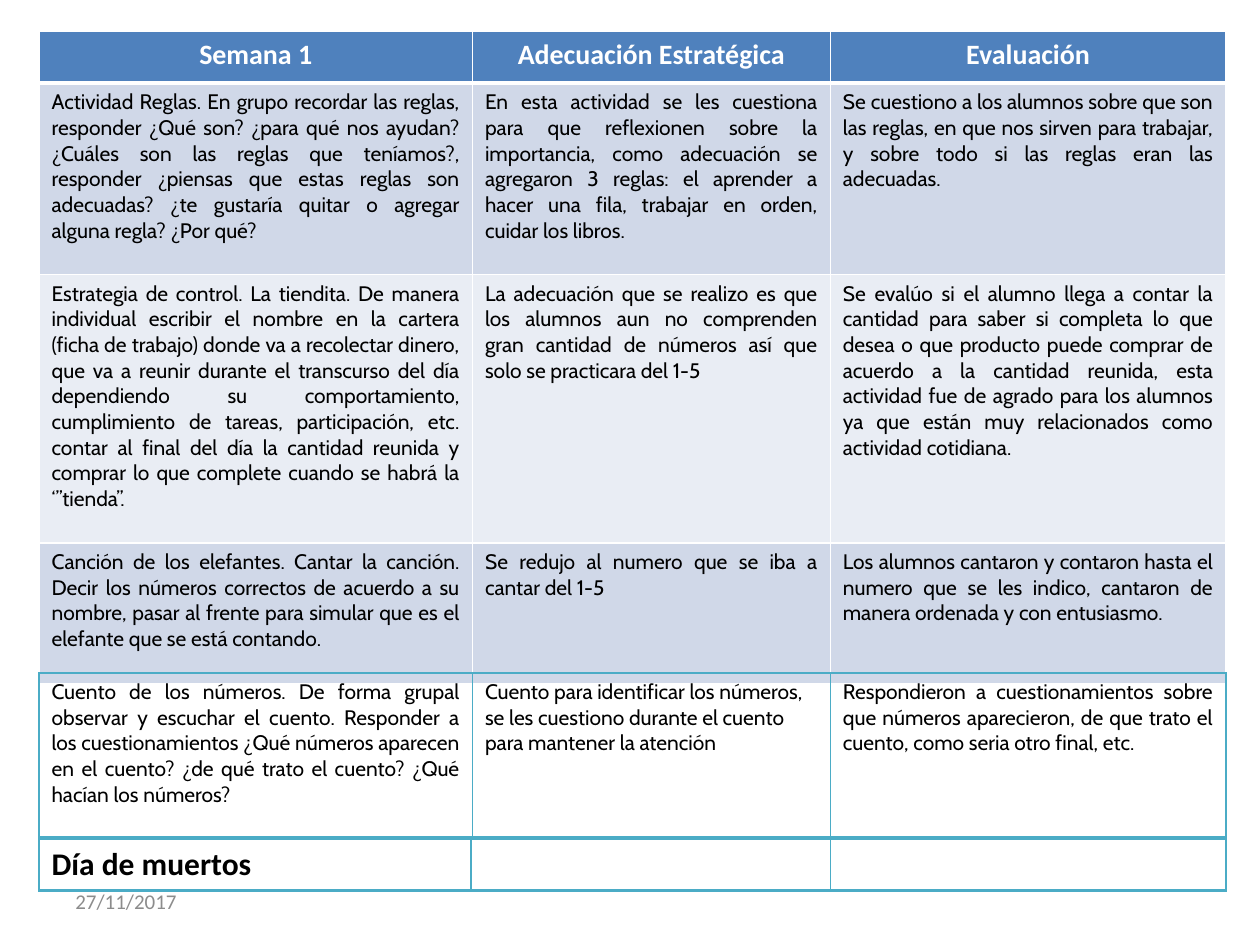
"""Build the weekly activity plan slide with its three stacked tables."""
from dataclasses import dataclass
from typing import Optional

from lxml import etree
from pptx import Presentation
from pptx.dml.color import RGBColor
from pptx.enum.text import MSO_ANCHOR, PP_ALIGN
from pptx.oxml.ns import qn
from pptx.util import Inches, Pt

LEFT, CENTER, JUSTIFY = PP_ALIGN.LEFT, PP_ALIGN.CENTER, PP_ALIGN.JUSTIFY
MIDDLE = MSO_ANCHOR.MIDDLE

WHITE = RGBColor(0xFF, 0xFF, 0xFF)
BLACK = RGBColor(0x00, 0x00, 0x00)
GRAY = RGBColor(0x8C, 0x8C, 0x8C)
BLUE = RGBColor(0x4F, 0x81, 0xBD)
BAND_DARK = RGBColor(0xD0, 0xD8, 0xE8)
BAND_LIGHT = RGBColor(0xE9, 0xED, 0xF4)
TEAL = RGBColor(0x4B, 0xAC, 0xC6)

SLIDE_WIDTH, SLIDE_HEIGHT = Inches(10), Inches(7.5)
COLUMN, ROW = SLIDE_WIDTH / 100, SLIDE_HEIGHT / 75
TABLE_LEFT = 3.1


@dataclass(frozen=True)
class CellText:
    """Wording of one cell and its format."""
    text: str
    align: PP_ALIGN = JUSTIFY
    size: int = 12
    font: str = "Cabin"
    color: RGBColor = BLACK
    bold: bool = False


@dataclass(frozen=True)
class PlanRow:
    """One table row: height in grid rows, cells, fill and bottom line."""
    height: float
    cells: tuple[CellText, ...]
    fill: Optional[RGBColor] = None
    bottom: float = 2


@dataclass(frozen=True)
class PlanTable:
    """One table: top in grid rows, column widths in grid columns."""
    top: float
    rows: tuple[PlanRow, ...]
    border: RGBColor = TEAL
    widths: tuple[float, ...] = (34.4, 28.4, 31.4)


def heading(text: str) -> CellText:
    """Describe a column heading."""
    return CellText(text, CENTER, 16, "Calibri", WHITE, True)


ACTIVITIES = PlanTable(2.5, (
    PlanRow(4.1, (
        heading("Semana 1"),
        heading("Adecuación Estratégica"),
        heading("Evaluación"),
    ), BLUE, 3),
    PlanRow(15.2, (
        CellText("Actividad Reglas. En grupo recordar las reglas, responder ¿Qué son? "
                 "¿para qué nos ayudan? ¿Cuáles son las reglas que teníamos?, responder "
                 "¿piensas que estas reglas son adecuadas? ¿te gustaría quitar o agregar "
                 "alguna regla? ¿Por qué?"),
        CellText("En esta actividad se les cuestiona para que reflexionen sobre la "
                 "importancia, como adecuación se agregaron 3 reglas: el aprender a hacer "
                 "una fila, trabajar en orden, cuidar los libros."),
        CellText("Se cuestiono a los alumnos sobre que son las reglas, en que nos sirven "
                 "para trabajar, y sobre todo si las reglas eran las adecuadas."),
    ), BAND_DARK, 1),
    PlanRow(21.3, (
        CellText("Estrategia de control. La tiendita. De manera individual escribir el "
                 "nombre en la cartera (ficha de trabajo) donde va a recolectar dinero, que "
                 "va a reunir durante el transcurso del día dependiendo su comportamiento, "
                 "cumplimiento de tareas, participación, etc. contar al final del día la "
                 "cantidad reunida y comprar lo que complete cuando se habrá la "
                 "‘’’tienda’’."),
        CellText("La adecuación que se realizo es que los alumnos aun no comprenden gran "
                 "cantidad de números así que solo se practicara del 1-5"),
        CellText("Se evalúo si el alumno llega a contar la cantidad para saber si completa "
                 "lo que desea o que producto puede comprar de acuerdo a la cantidad "
                 "reunida, esta actividad fue de agrado para los alumnos ya que están muy "
                 "relacionados como actividad cotidiana."),
    ), BAND_LIGHT, 1),
    PlanRow(11.2, (
        CellText("Canción de los elefantes. Cantar la canción. Decir los números correctos "
                 "de acuerdo a su nombre, pasar al frente para simular que es el elefante "
                 "que se está contando."),
        CellText("Se redujo al numero que se iba a cantar del 1-5"),
        CellText("Los alumnos cantaron y contaron hasta el numero que se les indico, "
                 "cantaron de manera ordenada y con entusiasmo."),
    ), BAND_DARK, 1),
), WHITE)

STORY = PlanTable(53.4, (
    PlanRow(13.1, (
        CellText("Cuento de los números. De forma grupal observar y escuchar el cuento. "
                 "Responder a los cuestionamientos ¿Qué números aparecen en el cuento? ¿de "
                 "qué trato el cuento? ¿Qué hacían los números?"),
        CellText("Cuento para identificar los números, se les cuestiono durante el cuento "
                 "para mantener la atención", LEFT),
        CellText("Respondieron a cuestionamientos sobre que números aparecieron, de que "
                 "trato el cuento, como seria otro final, etc."),
    )),
))

HOLIDAY = PlanTable(66.6, (
    PlanRow(4.1, (CellText("Día de muertos", LEFT, 18, "Calibri", BLACK, True),)),
), widths=(34.3, 28.5, 31.4))


def across(columns: float) -> int:
    """Turn grid columns into a length."""
    return round(columns * COLUMN)


def down(rows: float) -> int:
    """Turn grid rows into a length."""
    return round(rows * ROW)


def write(frame, text: str, *, align=LEFT, size=12, font="Calibri",
          color=BLACK, bold=False) -> None:
    """Fill a text frame with one formatted paragraph."""
    paragraph = frame.paragraphs[0]
    paragraph.alignment = align
    run = paragraph.add_run()
    run.text = text
    run.font.size, run.font.name, run.font.bold = Pt(size), font, bold
    run.font.color.rgb = color


def draw_borders(cell, color: RGBColor, bottom: float) -> None:
    """Line all four sides of a cell."""
    properties = cell._tc.get_or_add_tcPr()
    for side, width in (("L", 1), ("R", 1), ("T", 1), ("B", bottom)):
        line = etree.SubElement(properties, qn(f"a:ln{side}"), w=str(Pt(width)))
        solid = etree.SubElement(line, qn("a:solidFill"))
        etree.SubElement(solid, qn("a:srgbClr"), val=str(color))


def draw_table(slide, plan: PlanTable) -> None:
    """Draw one table of the plan."""
    table = slide.shapes.add_table(
        len(plan.rows), len(plan.widths), across(TABLE_LEFT), down(plan.top),
        across(sum(plan.widths)), down(sum(row.height for row in plan.rows))).table
    table.first_row = table.horz_banding = False
    for column, width in zip(table.columns, plan.widths):
        column.width = across(width)
    for table_row, row in zip(table.rows, plan.rows):
        table_row.height = down(row.height)
        for cell in table_row.cells:
            draw_borders(cell, plan.border, row.bottom)
            if row.fill is None:
                cell.fill.background()
            else:
                cell.fill.solid()
                cell.fill.fore_color.rgb = row.fill
        for cell, entry in zip(table_row.cells, row.cells):
            write(cell.text_frame, entry.text, align=entry.align, size=entry.size,
                  font=entry.font, color=entry.color, bold=entry.bold)


def draw_date(slide, date: str) -> None:
    """Write the date at the foot of the slide."""
    frame = slide.shapes.add_textbox(across(5), down(69.5), across(23.3), down(4)).text_frame
    frame.word_wrap = True
    frame.vertical_anchor = MIDDLE
    write(frame, date, color=GRAY)


def main() -> None:
    """Build and save the slide."""
    presentation = Presentation()
    presentation.slide_width, presentation.slide_height = SLIDE_WIDTH, SLIDE_HEIGHT
    slide = presentation.slides.add_slide(presentation.slide_layouts[6])
    draw_date(slide, "27/11/2017")
    for plan in (ACTIVITIES, STORY, HOLIDAY):
        draw_table(slide, plan)
    presentation.save("out.pptx")


if __name__ == "__main__":
    main()
